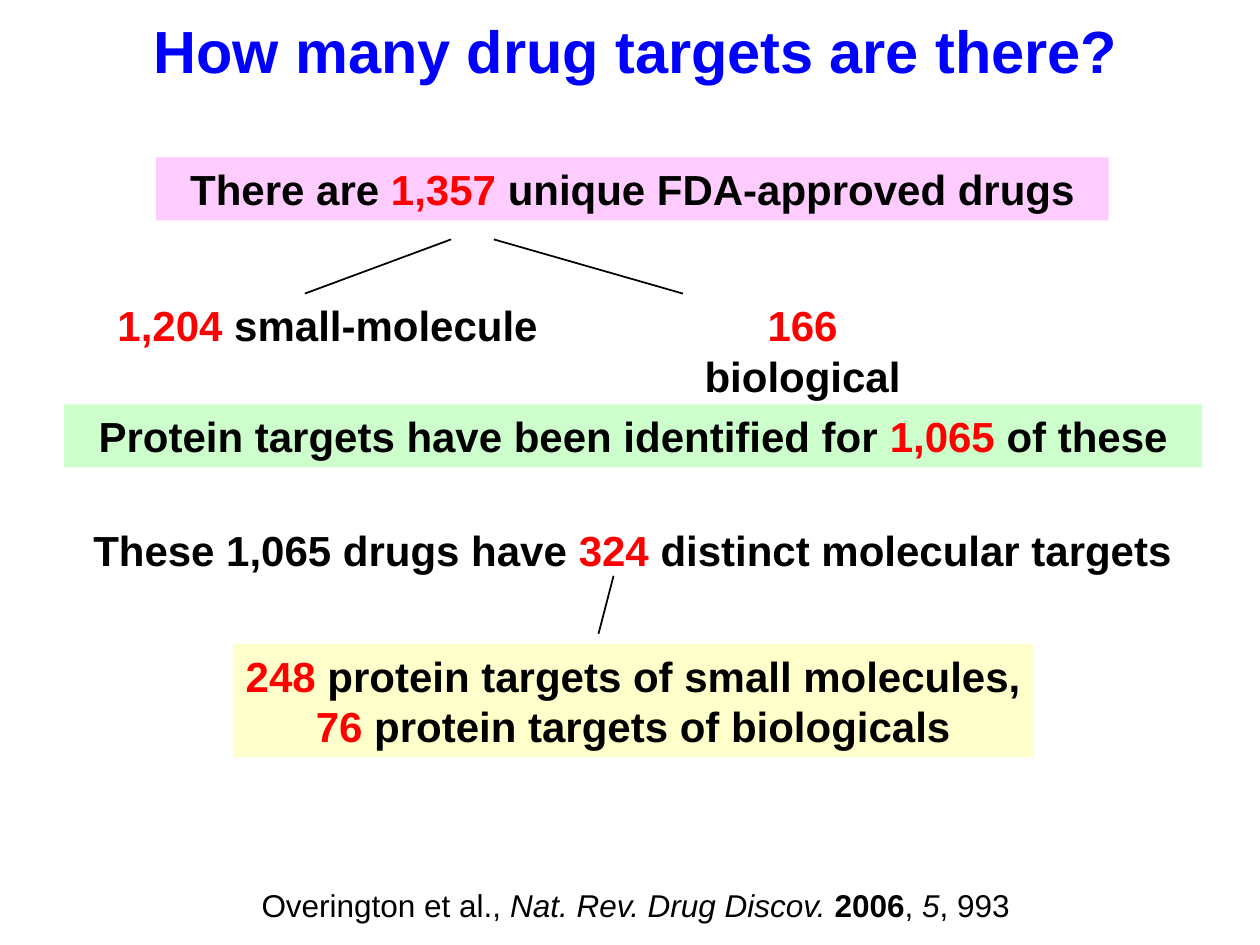
from dataclasses import dataclass

from lxml.etree import SubElement
from pptx import Presentation
from pptx.dml.color import RGBColor
from pptx.enum.shapes import MSO_CONNECTOR, MSO_SHAPE
from pptx.enum.text import MSO_ANCHOR, PP_ALIGN
from pptx.oxml.ns import qn
from pptx.util import Inches, Pt


@dataclass(frozen=True)
class Theme:
    """Colours, font and type sizes of the slide."""

    font: str = "Arial"
    ink: str = "000000"
    title: str = "0000FF"
    figure: str = "FF0000"
    pink: str = "FFCCFF"
    green: str = "CCFFCC"
    yellow: str = "FFFFCC"
    title_size: int = 34
    body_size: int = 24
    citation_size: int = 18
    line_width: int = 1


class SlideBuilder:
    """Draws styled elements on the current slide."""

    def __init__(self, page, theme):
        """Keep the slide and its theme."""
        self.page = page
        self.theme = theme

    def add_lines(self, box, lines, size, wrap=True):
        """Fill a box with centred lines of (text, colour, bold, italic) spans."""
        frame = box.text_frame
        frame.word_wrap = wrap
        frame.vertical_anchor = MSO_ANCHOR.TOP
        for index, spans in enumerate(lines):
            para = frame.add_paragraph() if index else frame.paragraphs[0]
            para.alignment = PP_ALIGN.CENTER
            for text, colour, bold, italic in spans:
                span = para.add_run()
                span.text = text
                span.font.name = self.theme.font
                span.font.size = Pt(size)
                span.font.bold = bold
                span.font.italic = italic
                span.font.color.rgb = RGBColor.from_string(colour)

    def text(self, area, spans, size):
        """Add a one-line text box."""
        box = self.page.shapes.add_textbox(*map(Inches, area))
        self.add_lines(box, [spans], size)

    def statement(self, area, *lines, fill=None, wrap=True):
        """Add bold lines with red figures, on a coloured band if a fill is given."""
        if fill:
            box = self.page.shapes.add_shape(MSO_SHAPE.RECTANGLE, *map(Inches, area))
            box.shadow.inherit = False
            box.fill.solid()
            box.fill.fore_color.rgb = RGBColor.from_string(fill)
            box.line.fill.background()
        else:
            box = self.page.shapes.add_textbox(*map(Inches, area))
        styled = [
            [
                (text, self.theme.figure if text.strip().replace(",", "").isdigit() else self.theme.ink, True, False)
                for text in line
            ]
            for line in lines
        ]
        self.add_lines(box, styled, self.theme.body_size, wrap)

    def branch(self, start, end):
        """Add a thin straight line between two points."""
        line = self.page.shapes.add_connector(MSO_CONNECTOR.STRAIGHT, *map(Inches, start + end))
        line.line.color.rgb = RGBColor.from_string(self.theme.ink)
        line.line.width = Pt(self.theme.line_width)
        SubElement(line._element.spPr, qn("a:effectLst"))


def main():
    """Build the drug target slide."""
    deck = Presentation()
    deck.slide_width, deck.slide_height = Inches(10), Inches(7.5)
    theme = Theme()
    builder = SlideBuilder(deck.slides.add_slide(deck.slide_layouts[6]), theme)

    title = [("How many drug targets are there?", theme.title, True, False)]
    builder.text((0.34, 0.06, 9.41, 0.67), title, theme.title_size)

    builder.statement(
        (1.24, 1.25, 7.56, 0.5), ["There are ", "1,357", " unique FDA-approved drugs"], fill=theme.pink
    )
    builder.branch((3.58, 1.9), (2.42, 2.33))
    builder.branch((3.92, 1.9), (5.42, 2.33))
    builder.statement((0.83, 2.33, 3.54, 0.5), ["1,204 ", "small-molecule"], wrap=False)
    builder.statement((5.17, 2.33, 2.4, 0.5), ["166 ", "biological"], wrap=False)

    builder.statement(
        (0.51, 3.21, 9.03, 0.5),
        ["Protein targets have been identified for ", "1,065", " of these"],
        fill=theme.green,
    )
    builder.statement(
        (0.64, 4.11, 8.76, 0.5),
        ["These 1,065 drugs have ", "324", " distinct molecular targets"],
        wrap=False,
    )
    builder.branch((4.87, 4.57), (4.75, 5.03))
    builder.statement(
        (1.85, 5.11, 6.35, 0.9),
        ["248 ", "protein targets of small molecules,"],
        ["76 ", "protein targets of biologicals"],
        fill=theme.yellow,
        wrap=False,
    )

    citation = [
        ("Overington et al., ", theme.ink, False, False),
        ("Nat. Rev. Drug Discov. ", theme.ink, False, True),
        ("2006", theme.ink, True, False),
        (", ", theme.ink, False, False),
        ("5", theme.ink, False, True),
        (", 993", theme.ink, False, False),
    ]
    builder.text((0.88, 6.98, 8.33, 0.4), citation, theme.citation_size)
    deck.save("out.pptx")


if __name__ == "__main__":
    main()
